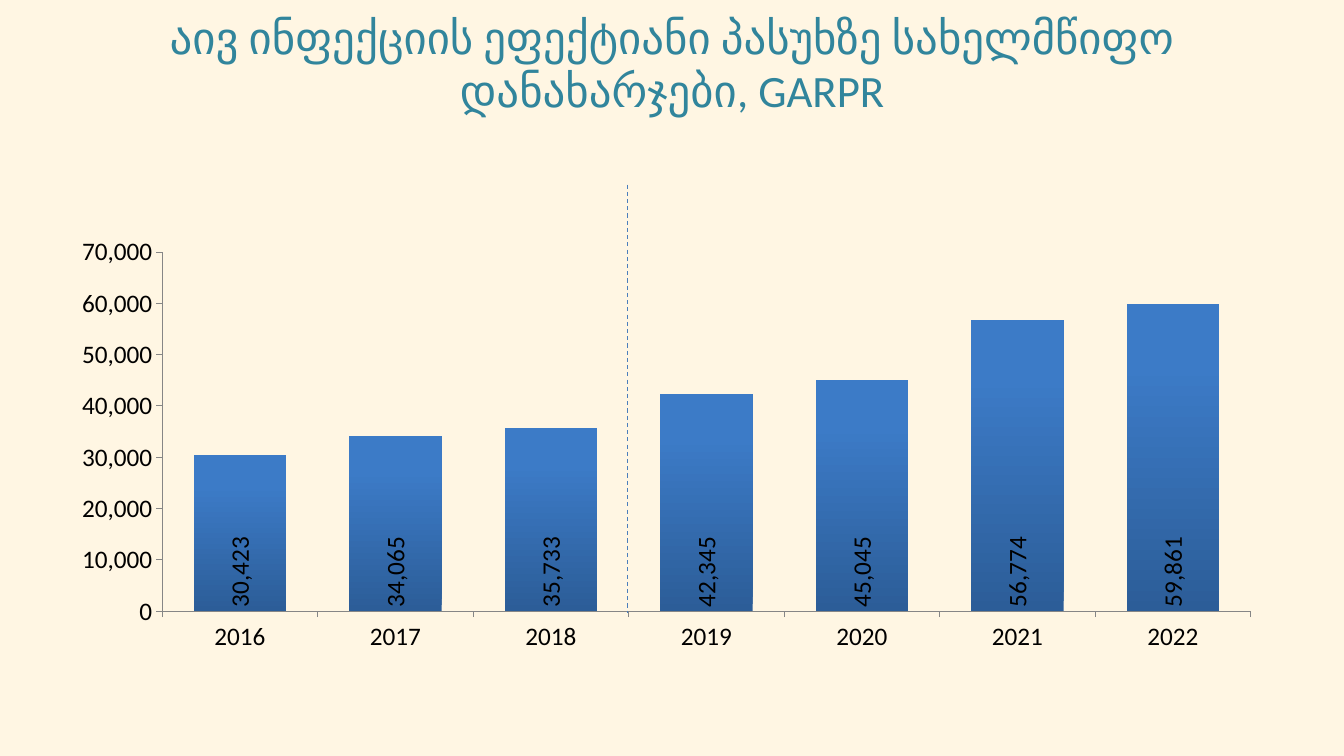
from dataclasses import dataclass

from lxml import etree
from pptx import Presentation
from pptx.chart import data as chart_data
from pptx.dml.color import RGBColor
from pptx.enum import chart as ch
from pptx.enum import dml, shapes, text
from pptx.oxml import ns
from pptx.util import Cm, Pt


@dataclass(frozen=True)
class Theme:
    font: str = "Calibri"
    title_size: int = 32
    chart_size: int = 18
    background: str = "FFF6E3"
    title: str = "31859C"
    ink: str = "000000"
    axis: str = "868686"
    divider: str = "4B7EBC"
    bar_bottom: str = "2C5D98"
    bar_top: str = "3C7BC7"


@dataclass(frozen=True)
class Spending:
    year: str
    amount: int


@dataclass(frozen=True)
class PlotArea:
    """Inner plot area as fractions of the chart frame."""
    x: float
    y: float
    w: float
    h: float


THEME = Theme()
TITLE = "აივ ინფექციის ეფექტიანი პასუხზე სახელმწიფო დანახარჯები, GARPR"
SPENDING = [
    Spending("2016", 30423),
    Spending("2017", 34065),
    Spending("2018", 35733),
    Spending("2019", 42345),
    Spending("2020", 45045),
    Spending("2021", 56774),
    Spending("2022", 59861),
]
PLOT = PlotArea(0.093, 0.168, 0.86, 0.72)


def rgb(value: str) -> RGBColor:
    return RGBColor.from_string(value)


def style_font(font, size: int, color: str) -> None:
    font.name = THEME.font
    font.size = Pt(size)
    font.color.rgb = rgb(color)


def add_title(slide) -> None:
    sp = slide.shapes.title
    sp.left, sp.top, sp.width, sp.height = Cm(1.7), Cm(0), Cm(30.48), Cm(3.18)
    tf = sp.text_frame
    tf.text = TITLE
    tf.word_wrap = True
    tf.vertical_anchor = text.MSO_ANCHOR.MIDDLE
    p = tf.paragraphs[0]
    p.alignment = text.PP_ALIGN.CENTER
    style_font(p.runs[0].font, THEME.title_size, THEME.title)


def fix_plot_area(chart, area: PlotArea) -> None:
    plot_area = chart.plots[0]._element.getparent()
    for old in plot_area.findall(ns.qn("c:layout")):
        plot_area.remove(old)
    layout = etree.Element(ns.qn("c:layout"))
    manual = etree.SubElement(layout, ns.qn("c:manualLayout"))
    settings = {"layoutTarget": "inner", "xMode": "edge", "yMode": "edge",
                "x": area.x, "y": area.y, "w": area.w, "h": area.h}
    for tag, value in settings.items():
        etree.SubElement(manual, ns.qn(f"c:{tag}"), val=str(value))
    plot_area.insert(0, layout)


def style_axis(axis) -> None:
    axis.has_major_gridlines = False
    axis.major_tick_mark = ch.XL_TICK_MARK.OUTSIDE
    axis.minor_tick_mark = ch.XL_TICK_MARK.NONE
    axis.format.line.color.rgb = rgb(THEME.axis)
    axis.format.line.width = Pt(0.75)
    style_font(axis.tick_labels.font, THEME.chart_size, THEME.ink)


def style_bars(plot) -> None:
    plot.gap_width = 68
    plot.vary_by_categories = False
    fill = plot.series[0].format.fill
    fill.gradient()
    fill.gradient_angle = 90
    bottom, top = fill.gradient_stops
    bottom.color.rgb, bottom.position = rgb(THEME.bar_bottom), 0
    top.color.rgb, top.position = rgb(THEME.bar_top), 0.8


def style_labels(labels) -> None:
    labels.show_value = True
    labels.number_format = "#,##0"
    labels.number_format_is_linked = False
    labels.position = ch.XL_LABEL_POSITION.INSIDE_BASE
    style_font(labels.font, THEME.chart_size, THEME.ink)
    body = labels._element.find(ns.qn("c:txPr")).find(ns.qn("a:bodyPr"))
    body.set("rot", "-5400000")
    body.set("vert", "horz")


def add_spending_chart(slide) -> None:
    data = chart_data.CategoryChartData(number_format="#,##0")
    data.categories = [item.year for item in SPENDING]
    data.add_series("Series 1", [item.amount for item in SPENDING])
    chart = slide.shapes.add_chart(
        ch.XL_CHART_TYPE.COLUMN_CLUSTERED,
        Cm(1.12), Cm(4.24), Cm(31.9), Cm(12.57), data).chart
    chart.has_legend = False
    chart.has_title = False
    style_font(chart.font, THEME.chart_size, THEME.ink)
    for axis in (chart.category_axis, chart.value_axis):
        style_axis(axis)
    value_axis = chart.value_axis
    value_axis.minimum_scale, value_axis.maximum_scale = 0, 70000
    value_axis.major_unit = 10000
    value_axis.tick_labels.number_format = "#,##0"
    value_axis.tick_labels.number_format_is_linked = False
    plot = chart.plots[0]
    style_bars(plot)
    style_labels(plot.series[0].data_labels)
    fix_plot_area(chart, PLOT)


def add_divider(slide) -> None:
    x = Cm(15.82)
    line = slide.shapes.add_connector(
        shapes.MSO_CONNECTOR.STRAIGHT, x, Cm(4.65), x, Cm(15.44))
    line.line.color.rgb = rgb(THEME.divider)
    line.line.width = Pt(0.75)
    line.line.dash_style = dml.MSO_LINE.DASH
    etree.SubElement(line._element.spPr, ns.qn("a:effectLst"))


def main() -> None:
    prs = Presentation()
    prs.slide_width, prs.slide_height = Cm(33.87), Cm(19.05)
    slide = prs.slides.add_slide(prs.slide_layouts[5])
    background = slide.background.fill
    background.solid()
    background.fore_color.rgb = rgb(THEME.background)
    add_title(slide)
    add_spending_chart(slide)
    add_divider(slide)
    prs.save("out.pptx")


if __name__ == "__main__":
    main()
